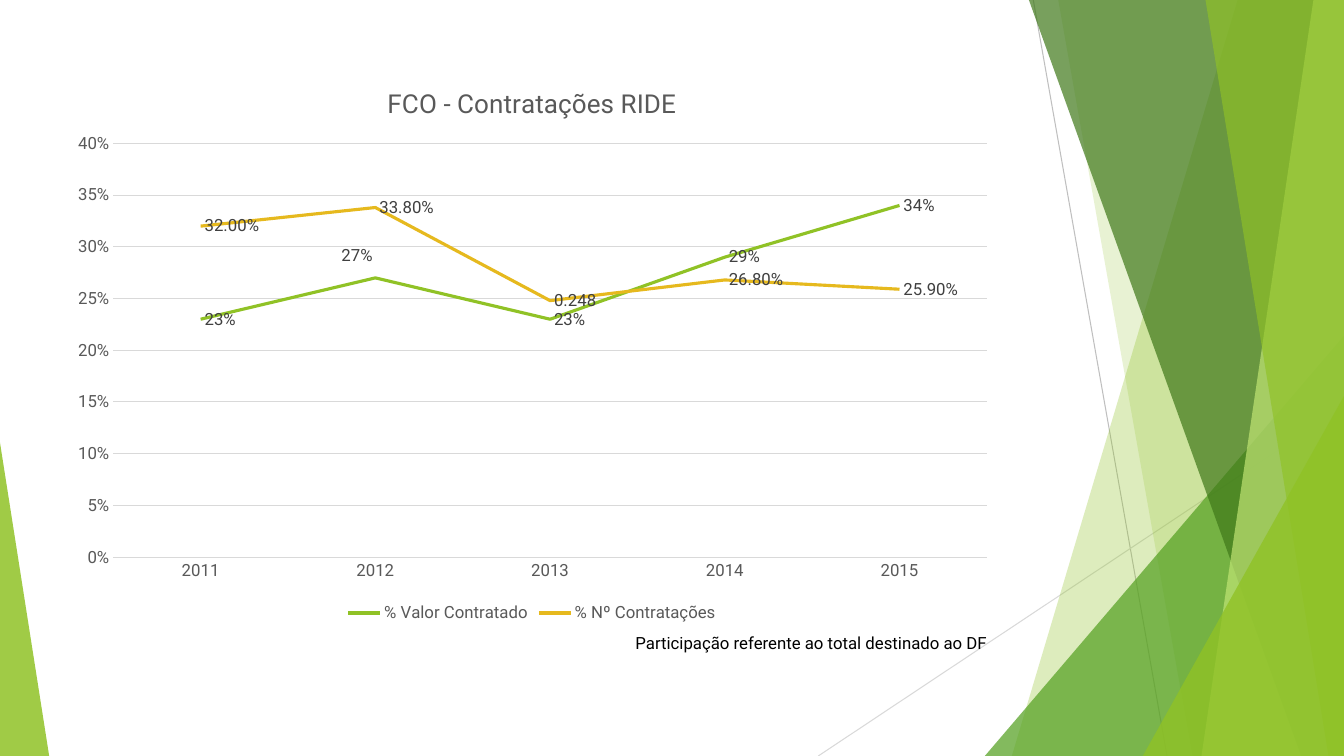
"""Slide with a line chart of FCO contracts in the RIDE region beside green facets."""
from lxml import etree
from pptx import Presentation
from pptx import util as u
from pptx.chart.data import CategoryChartData
from pptx.dml.color import RGBColor
from pptx.enum import chart as chart_enum, shapes, text
from pptx.oxml import parse_xml
from pptx.oxml.ns import nsdecls, qn

FONT = "Roboto"
GREEN = RGBColor(0x90, 0xC2, 0x26)
MID_GREEN = RGBColor(0x54, 0xA0, 0x21)
DARK_GREEN = RGBColor(0x3F, 0x78, 0x19)
PALE_GREEN = RGBColor(0xC0, 0xE4, 0x74)
GOLD = RGBColor(0xE6, 0xB9, 0x1E)
BLACK = RGBColor(0x00, 0x00, 0x00)
LABEL_GREY = RGBColor(0x40, 0x40, 0x40)
TEXT_GREY = RGBColor(0x59, 0x59, 0x59)
LINE_GREY = RGBColor(0xBF, 0xBF, 0xBF)
GRID_GREY = RGBColor(0xD9, 0xD9, 0xD9)
WIDTH, HEIGHT = 33.87, 19.05


def style_font(font, color, size=12):
    font.name, font.size, font.bold = FONT, u.Pt(size), False
    font.color.rgb = color


def manual_layout(**values):
    items = "".join(f'<c:{name} val="{value}"/>' for name, value in values.items())
    return parse_xml(f'<c:layout {nsdecls("c")}><c:manualLayout>{items}</c:manualLayout></c:layout>')


presentation = Presentation()
presentation.slide_width, presentation.slide_height = u.Cm(WIDTH), u.Cm(HEIGHT)
slide = presentation.slides.add_slide(presentation.slide_layouts[6])

for x1, y1, x2, y2, color in [
    (26.04, 0, 29.41, HEIGHT, LINE_GREY),
    (WIDTH, 10.24, 20.62, HEIGHT, GRID_GREY),
]:
    connector = slide.shapes.add_connector(
        shapes.MSO_CONNECTOR.STRAIGHT, u.Cm(x1), u.Cm(y1), u.Cm(x2), u.Cm(y2))
    connector.line.color.rgb = color
    connector.line.width = u.Pt(0.75)
    etree.SubElement(connector._element.spPr, qn("a:effectLst"))

facets = [
    ("band", (31.19, 25.5), GREEN, 30),
    ("band", (26.67, 30.05), GREEN, 20),
    ("triangle", (24.82, 8.46, WIDTH, 1), MID_GREEN, 72),
    ("band", (25.93, 32.79), DARK_GREEN, 70),
    ("band", (33.1, 30.28), PALE_GREEN, 70),
    ("band", (30.38, 33.48), GREEN, 65),
    ("triangle", (28.8, 9.98, WIDTH, 1), GREEN, 80),
    ("triangle", (0, 11.15, 1.24, 0), GREEN, 85),
]
for kind, geometry, color, opacity in facets:
    if kind == "band":
        top_x, bottom_x = geometry
        builder = slide.shapes.build_freeform(u.Cm(top_x), 0)
        builder.add_line_segments([(u.Cm(x), u.Cm(y)) for x, y in
                                   [(WIDTH, 0), (WIDTH, HEIGHT), (bottom_x, HEIGHT)]])
        shape = builder.convert_to_shape()
    else:
        left, top, right, apex = geometry
        shape = slide.shapes.add_shape(
            shapes.MSO_SHAPE.ISOSCELES_TRIANGLE,
            u.Cm(left), u.Cm(top), u.Cm(right - left), u.Cm(HEIGHT - top))
        shape.adjustments[0] = apex
    shape.shadow.inherit = False
    shape.line.fill.background()
    shape.fill.solid()
    shape.fill.fore_color.rgb = color
    color_element = shape._element.spPr.find(qn("a:solidFill"))[0]
    etree.SubElement(color_element, qn("a:alpha"), val=str(opacity * 1000))

data = CategoryChartData(number_format="0%")
data.categories = ["2011", "2012", "2013", "2014", "2015"]
data.add_series("% Valor Contratado", [0.23, 0.27, 0.23, 0.29, 0.34])
data.add_series("% Nº Contratações", [0.32, 0.338, 0.248, 0.268, 0.259], "0.00%")
chart = slide.shapes.add_chart(
    chart_enum.XL_CHART_TYPE.LINE, u.Cm(1.47), u.Cm(1.63), u.Cm(23.88), u.Cm(14.17), data).chart
style_font(chart.font, BLACK, 10)

chart.has_title = True
title_run = chart.chart_title.text_frame.paragraphs[0].add_run()
title_run.text = "FCO - Contratações RIDE"
style_font(title_run.font, TEXT_GREY, 18.6)
chart.chart_title.include_in_layout = False

chart.has_legend = True
chart.legend.position = chart_enum.XL_LEGEND_POSITION.BOTTOM
chart.legend.include_in_layout = False
style_font(chart.legend.font, TEXT_GREY)

for axis in (chart.category_axis, chart.value_axis):
    axis.major_tick_mark = axis.minor_tick_mark = chart_enum.XL_TICK_MARK.NONE
    style_font(axis.tick_labels.font, TEXT_GREY)
value_axis = chart.value_axis
value_axis.minimum_scale, value_axis.maximum_scale, value_axis.major_unit = 0, 0.4, 0.05
value_axis.tick_labels.number_format = "0%"
value_axis.tick_labels.number_format_is_linked = False
value_axis.format.line.fill.background()
for line in (chart.category_axis.format.line, value_axis.major_gridlines.format.line):
    line.color.rgb = GRID_GREY
    line.width = u.Pt(0.75)

plot = chart.plots[0]
plot.vary_by_categories = False
for series, color, number_format in zip(plot.series, (GREEN, GOLD), ("0%", "0.00%")):
    series.smooth = False
    series.marker.style = chart_enum.XL_MARKER_STYLE.NONE
    series.format.line.color.rgb = color
    series.format.line.width = u.Pt(2.25)
    labels = series.data_labels
    labels.show_value = True
    labels.number_format, labels.number_format_is_linked = number_format, False
    labels.position = chart_enum.XL_LABEL_POSITION.RIGHT
    style_font(labels.font, LABEL_GREY)
    for leader_lines in series._element.iter(qn("c:showLeaderLines")):
        leader_lines.set("val", "0")

value_series, count_series = plot.series
moved_label = value_series.points[1].data_label
moved_label.position = chart_enum.XL_LABEL_POSITION.RIGHT
style_font(moved_label.font, LABEL_GREY)
label_index = value_series._element.find(f'.//{qn("c:dLbl")}/{qn("c:idx")}')
label_index.addnext(parse_xml(f'<c:numFmt {nsdecls("c")} formatCode="0%" sourceLinked="0"/>'))
label_index.addnext(manual_layout(x=-0.04, y=-0.04))

plain_label = count_series.points[2].data_label
plain_run = plain_label.text_frame.paragraphs[0].add_run()
plain_run.text = "0.248"
style_font(plain_run.font, LABEL_GREY)
plain_label.position = chart_enum.XL_LABEL_POSITION.RIGHT

plot_area = plot._element.getparent()
for old_layout in plot_area.findall(qn("c:layout")):
    plot_area.remove(old_layout)
plot_area.insert(0, manual_layout(layoutTarget="inner", xMode="edge", yMode="edge",
                                  x=0.058, y=0.14, w=0.922, h=0.736))

note = slide.shapes.add_textbox(u.Cm(8.51), u.Cm(15.82), u.Cm(23.88), u.Cm(3.2))
note.text_frame.word_wrap = True
note.text_frame.vertical_anchor = text.MSO_ANCHOR.TOP
paragraph = note.text_frame.paragraphs[0]
paragraph.alignment = text.PP_ALIGN.CENTER
note_run = paragraph.add_run()
note_run.text = "Participação referente ao total destinado ao DF"
style_font(note_run.font, BLACK)

presentation.save("out.pptx")
